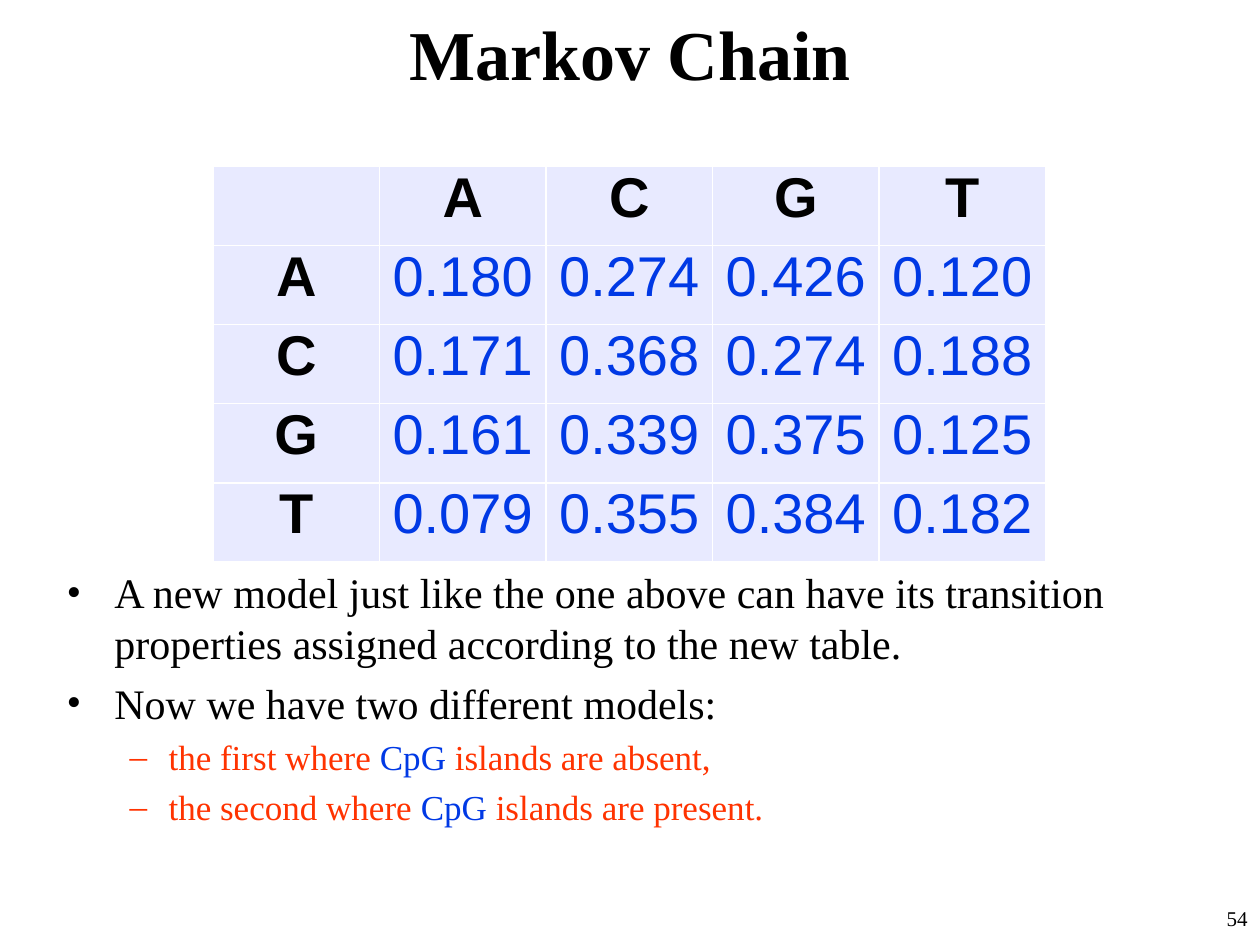
from lxml.etree import SubElement
from pptx import Presentation
from pptx.dml.color import RGBColor
from pptx.enum.text import MSO_ANCHOR as Anchor, PP_ALIGN as Align
from pptx.oxml.ns import qn
from pptx.util import Inches, Pt

SERIF, SANS = "Times New Roman", "Arial"
BLACK, BLUE, RED, WHITE, PALE = "000000", "0039E5", "FF3300", "FFFFFF", "E8EAFF"

BASES = "ACGT"
TRANSITIONS = [
    ["0.180", "0.274", "0.426", "0.120"],
    ["0.171", "0.368", "0.274", "0.188"],
    ["0.161", "0.339", "0.375", "0.125"],
    ["0.079", "0.355", "0.384", "0.182"],
]
POINTS = [
    "A new model just like the one above can have its transition "
    "properties assigned according to the new table.",
    "Now we have two different models:",
]
MODELS = [
    ("the first where ", "CpG", " islands are absent,"),
    ("the second where ", "CpG", " islands are present."),
]


def rgb(color):
    return RGBColor.from_string(color)


def style(paragraph, size, color=BLACK, face=SERIF, bold=False, align=Align.LEFT):
    paragraph.alignment = align
    font = paragraph.font
    font.size, font.name, font.bold = Pt(size), face, bold
    font.color.rgb = rgb(color)


def add_text_frame(slide, left, top, width, height, anchor=Anchor.TOP):
    box = slide.shapes.add_textbox(
        Inches(left), Inches(top), Inches(width), Inches(height))
    frame = box.text_frame
    frame.word_wrap = True
    frame.vertical_anchor = anchor
    return frame


def add_line(slide, text, place, size, anchor=Anchor.TOP, **look):
    frame = add_text_frame(slide, *place, anchor=anchor)
    frame.text = text
    style(frame.paragraphs[0], size, **look)


def set_bullet(paragraph, mark, margin, hanging):
    properties = paragraph._p.get_or_add_pPr()
    properties.set("marL", str(Inches(margin)))
    properties.set("indent", str(-Inches(hanging)))
    SubElement(properties, qn("a:buFont"), typeface=SERIF)
    SubElement(properties, qn("a:buChar"), char=mark)


def add_points(slide):
    frame = add_text_frame(slide, 0.43, 4.45, 9.06, 2.22)
    paragraph = frame.paragraphs[0]
    for index, point in enumerate(POINTS):
        if index:
            paragraph = frame.add_paragraph()
        paragraph.text = point
        paragraph.space_before = Pt(5.5)
        set_bullet(paragraph, "•", 0.38, 0.38)
        style(paragraph, 24)
    for parts in MODELS:
        paragraph = frame.add_paragraph()
        paragraph.level = 1
        paragraph.space_before = Pt(4.6)
        set_bullet(paragraph, "–", 0.81, 0.31)
        style(paragraph, 20, RED)
        for part, color in zip(parts, (RED, BLUE, RED)):
            run = paragraph.add_run()
            run.text = part
            run.font.size, run.font.name = Pt(20), SERIF
            run.font.color.rgb = rgb(color)


def set_borders(cell, color):
    properties = cell._tc.get_or_add_tcPr()
    for position, side in enumerate(("a:lnL", "a:lnR", "a:lnT", "a:lnB")):
        line = properties.makeelement(qn(side), {"w": str(Pt(1))})
        fill = SubElement(line, qn("a:solidFill"))
        SubElement(fill, qn("a:srgbClr"), val=color)
        properties.insert(position, line)


def fill_cell(cell, text, color, bold):
    cell.margin_left = cell.margin_right = Inches(0.07)
    cell.margin_top = cell.margin_bottom = 0
    cell.fill.solid()
    cell.fill.fore_color.rgb = rgb(PALE)
    set_borders(cell, WHITE)
    cell.text = text
    style(cell.text_frame.paragraphs[0], 32, color, SANS, bold, Align.CENTER)


def add_transition_table(slide):
    rows = [["", *BASES]]
    rows += [[base, *values] for base, values in zip(BASES, TRANSITIONS)]
    count = len(rows)
    table = slide.shapes.add_table(
        count, count, Inches(1.69), Inches(1.32), Inches(6.61), Inches(3.14)).table
    for r, row in enumerate(rows):
        for c, text in enumerate(row):
            heading = r == 0 or c == 0
            fill_cell(table.cell(r, c), text, BLACK if heading else BLUE, heading)


def main():
    deck = Presentation()
    deck.slide_width, deck.slide_height = Inches(10), Inches(7.5)
    slide = deck.slides.add_slide(deck.slide_layouts[6])
    add_line(slide, "Markov Chain", (0, 0, 10, 0.84), 40, Anchor.MIDDLE,
             bold=True, align=Align.CENTER)
    add_line(slide, "54", (7.92, 7.14, 2.08, 0.36), 12, align=Align.RIGHT)
    add_points(slide)
    add_transition_table(slide)
    deck.save("out.pptx")


if __name__ == "__main__":
    main()
